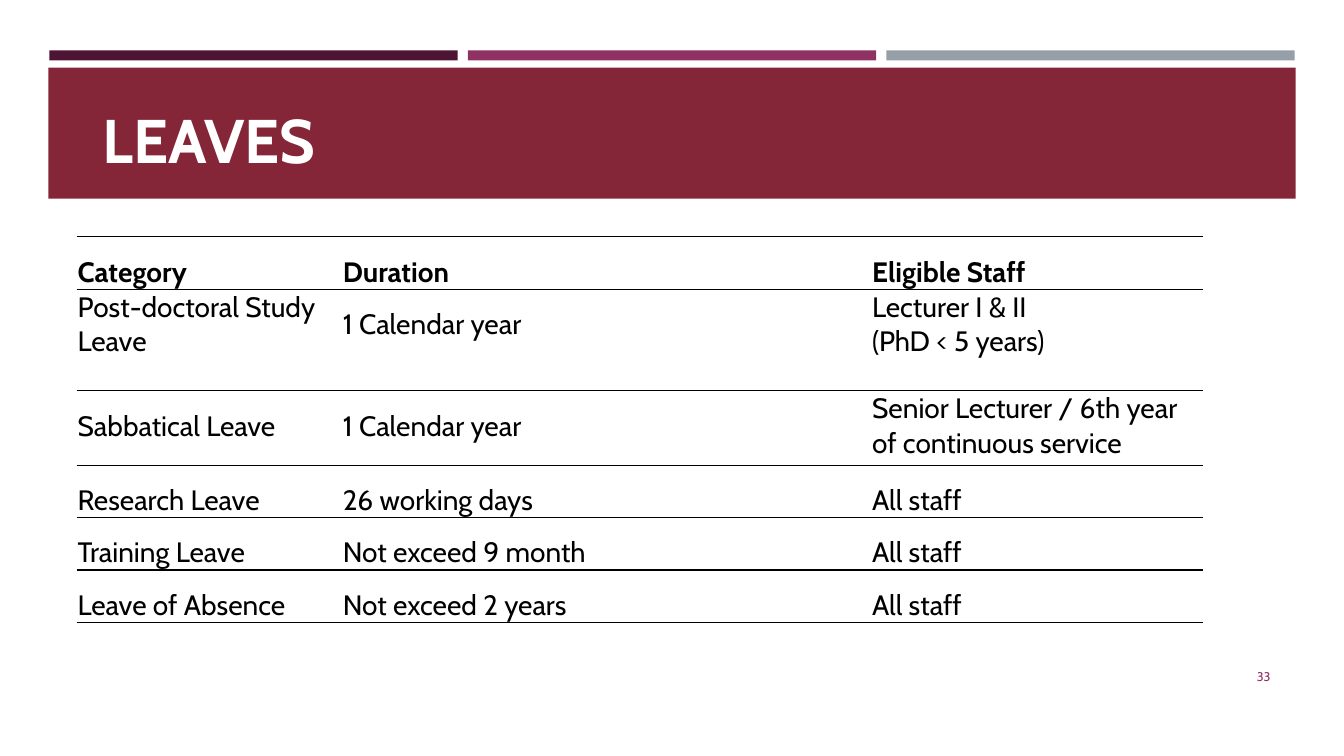
import lxml.etree
import pptx
import pptx.dml.color
import pptx.enum.shapes
import pptx.enum.text
import pptx.oxml.ns
import pptx.util

Inches = pptx.util.Inches
Pt = pptx.util.Pt
ALIGN = pptx.enum.text.PP_ALIGN
ANCHOR = pptx.enum.text.MSO_ANCHOR

FONT = "Cabin"
BLACK, WHITE, PLUM = "000000", "FFFFFF", "903163"

# Each cell is a list of paragraphs
LEAVE_ROWS = [
    [["Category"], ["Duration"], ["Eligible Staff"]],
    [["Post-doctoral Study Leave"], ["1 Calendar year"],
     ["Lecturer I & II", "(PhD < 5 years)"]],
    [["Sabbatical Leave"], ["1 Calendar year"],
     ["Senior Lecturer / 6th year of continuous service"]],
    [["Research Leave"], ["26 working days"], ["All staff"]],
    [["Training Leave"], ["Not exceed 9 month"], ["All staff"]],
    [["Leave of Absence"], ["Not exceed 2 years"], ["All staff"]],
]
COLUMN_WIDTHS = [2.63, 5.25, 3.29]
ROW_HEIGHTS = [0.46, 1.01, 0.74, 0.46, 0.46, 0.46]
# Row and column of the cells whose text wraps or has two paragraphs
SINGLE_SPACED = {(1, 0), (1, 2), (2, 2)}


def color(hex_value):
    return pptx.dml.color.RGBColor.from_string(hex_value)


def add_run(paragraph, text, size, hex_value, bold=False):
    run = paragraph.add_run()
    run.text = text
    run.font.name = FONT
    run.font.size = Pt(size)
    run.font.bold = bold
    run.font.color.rgb = color(hex_value)


def add_bar(slide, left, top, width, height, hex_value):
    shape = slide.shapes.add_shape(
        pptx.enum.shapes.MSO_SHAPE.RECTANGLE,
        Inches(left), Inches(top), Inches(width), Inches(height))
    shape.shadow.inherit = False
    shape.fill.solid()
    shape.fill.fore_color.rgb = color(hex_value)
    shape.line.fill.background()


def set_title(slide, text):
    title = slide.shapes.title
    title.left, title.top = Inches(0.92), Inches(0.85)
    title.width, title.height = Inches(11.5), Inches(0.94)
    title.text_frame.vertical_anchor = ANCHOR.BOTTOM
    paragraph = title.text_frame.paragraphs[0]
    paragraph.alignment = ALIGN.LEFT
    add_run(paragraph, text, 44, WHITE, bold=True)


def set_borders(cell):
    """Rule the cell above and below, and leave its sides open."""
    properties = cell._tc.get_or_add_tcPr()
    qn = pptx.oxml.ns.qn
    for index, side in enumerate(["lnL", "lnR", "lnT", "lnB"]):
        line = lxml.etree.Element(qn("a:" + side), w=str(Pt(1)))
        if side in ("lnT", "lnB"):
            fill = lxml.etree.SubElement(line, qn("a:solidFill"))
            lxml.etree.SubElement(fill, qn("a:srgbClr"), val=BLACK)
        else:
            lxml.etree.SubElement(line, qn("a:noFill"))
        properties.insert(index, line)


def fill_cell(cell, lines, spacing, bold):
    cell.margin_left = cell.margin_right = cell.margin_top = Inches(0.01)
    cell.margin_bottom = 0
    cell.vertical_anchor = ANCHOR.TOP
    cell.fill.background()
    set_borders(cell)
    for index, text in enumerate(lines):
        frame = cell.text_frame
        paragraph = frame.add_paragraph() if index else frame.paragraphs[0]
        paragraph.line_spacing = spacing
        add_run(paragraph, text, 20, BLACK, bold)


def add_leave_table(slide):
    table = slide.shapes.add_table(
        len(LEAVE_ROWS), len(COLUMN_WIDTHS), Inches(0.76), Inches(2.35),
        Inches(sum(COLUMN_WIDTHS)), Inches(sum(ROW_HEIGHTS))).table
    table.first_row = table.horz_banding = False
    for column, width in zip(table.columns, COLUMN_WIDTHS):
        column.width = Inches(width)
    for row, height in zip(table.rows, ROW_HEIGHTS):
        row.height = Inches(height)
    for row_index, row in enumerate(LEAVE_ROWS):
        for column_index, lines in enumerate(row):
            position = (row_index, column_index)
            spacing = 1.0 if position in SINGLE_SPACED else 1.5
            fill_cell(table.cell(*position), lines, spacing, row_index == 0)


def add_page_number(slide, text):
    box = slide.shapes.add_textbox(
        Inches(11.55), Inches(6.51), Inches(1.15), Inches(0.4))
    box.text_frame.word_wrap = True
    box.text_frame.vertical_anchor = ANCHOR.MIDDLE
    paragraph = box.text_frame.paragraphs[0]
    paragraph.alignment = ALIGN.RIGHT
    add_run(paragraph, text, 9, PLUM)


def main():
    presentation = pptx.Presentation()
    presentation.slide_width = Inches(13.33)
    presentation.slide_height = Inches(7.5)
    slide = presentation.slides.add_slide(presentation.slide_layouts[5])

    # Three accent strips above the title band
    for index, hex_value in enumerate(["4D1434", PLUM, "969FA7"]):
        add_bar(slide, 0.49 + index * 4.15, 0.5, 4.05, 0.1, hex_value)
    add_bar(slide, 0.48, 0.67, 12.37, 1.3, "852638")

    # The title is lifted in front of its band
    set_title(slide, "LEAVES")
    slide.shapes._spTree.append(slide.shapes.title._element)

    # Content and page number
    add_leave_table(slide)
    add_page_number(slide, "33")
    presentation.save("out.pptx")


if __name__ == "__main__":
    main()
